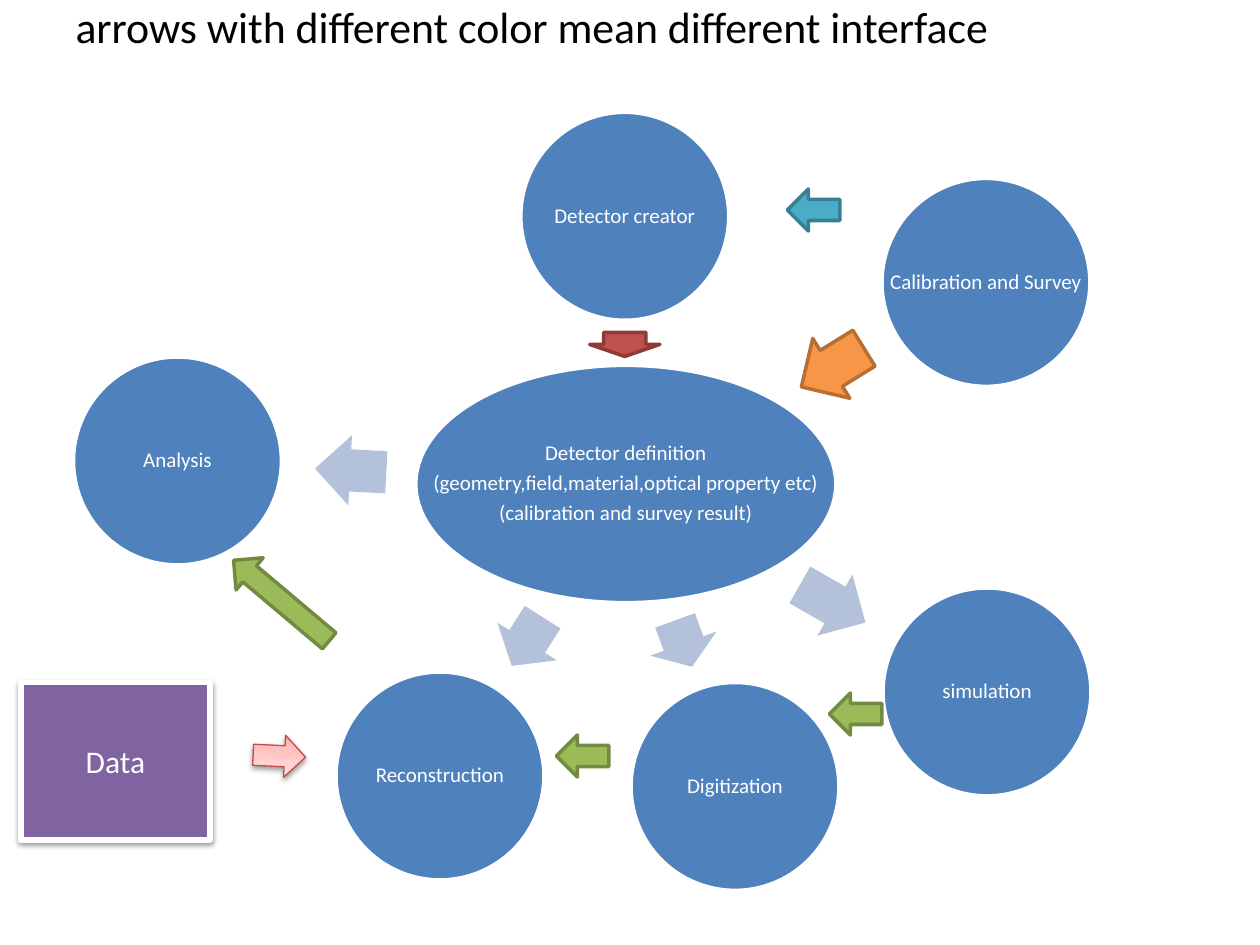
from dataclasses import dataclass

from lxml import etree
from pptx import Presentation
from pptx.dml.color import RGBColor
from pptx.enum.shapes import MSO_SHAPE
from pptx.enum.text import MSO_ANCHOR, PP_ALIGN
from pptx.oxml.ns import qn
from pptx.util import Inches, Pt

OVAL, RECT = MSO_SHAPE.OVAL, MSO_SHAPE.RECTANGLE
RIGHT, LEFT = MSO_SHAPE.RIGHT_ARROW, MSO_SHAPE.LEFT_ARROW
MIDDLE = MSO_ANCHOR.MIDDLE
CENTER, START = PP_ALIGN.CENTER, PP_ALIGN.LEFT
COLS, ROWS = 120, 90


@dataclass(frozen=True)
class Theme:
    """Colours as fill and line pairs, the font and the type sizes."""
    font: str = "Calibri"
    head: float = 25
    big: float = 18
    small: float = 12
    ink: str = "000000"
    white: str = "FFFFFF"
    node: tuple = ("4F81BD", "FFFFFF")
    data: tuple = ("8064A2", "FFFFFF")
    pale: tuple = ("B3C1DB", None)
    red: tuple = ("C0504D", "8E3B39")
    orange: tuple = ("F79646", "B76F34")
    green: tuple = ("9BBB59", "738A42")
    teal: tuple = ("4BACC6", "377F92")
    pink: tuple = ("FFC0BF", "BF4C48")
    fade: tuple = ((0, "FFA6A5"), (35, "FFC0BF"), (100, "FFE7E7"))


class Deck:
    """Draws styled parts on a slide, placed by centre in grid cells."""

    def __init__(self, theme):
        """Open a deck with one title slide."""
        self.theme = theme
        self.prs = Presentation()
        self.prs.slide_width, self.prs.slide_height = Inches(10), Inches(7.5)
        self.slide = self.prs.slides.add_slide(self.prs.slide_layouts[5])

    def box(self, x, y, w, h):
        """Turn a centre and size in cells into left, top, width, height."""
        col, row = self.prs.slide_width / COLS, self.prs.slide_height / ROWS
        return [round(v) for v in
                ((x - w / 2) * col, (y - h / 2) * row, w * col, h * row)]

    def label(self, frame, lines, size, color, align=CENTER):
        """Set one paragraph for each line."""
        frame.vertical_anchor = MIDDLE
        for i, line in enumerate(lines):
            para = frame.add_paragraph() if i else frame.paragraphs[0]
            para.alignment = align
            run = para.add_run()
            run.text = line
            run.font.name, run.font.size = self.theme.font, Pt(size)
            run.font.color.rgb = RGBColor.from_string(color)

    def title(self, text, *place):
        """Move and fill the title placeholder."""
        head = self.slide.shapes.title
        head.left, head.top, head.width, head.height = self.box(*place)
        self.label(head.text_frame, [text], self.theme.head, self.theme.ink, START)

    def shape(self, kind, place, paint, width=2, turn=0):
        """Add a preset shape with its fill, line and turn."""
        shape = self.slide.shapes.add_shape(kind, *self.box(*place))
        shape.shadow.inherit = False
        shape.rotation = turn
        fill, line = paint
        shape.fill.solid()
        shape.fill.fore_color.rgb = RGBColor.from_string(fill)
        if line:
            shape.line.color.rgb = RGBColor.from_string(line)
            shape.line.width = Pt(width)
        else:
            shape.line.fill.background()
        return shape

    def node(self, lines, x, y, w=19.8, h=19.8):
        """Add an oval with small centred lines."""
        frame = self.shape(OVAL, (x, y, w, h), self.theme.node).text_frame
        frame.word_wrap = False
        frame.margin_left = frame.margin_right = Inches(0.02)
        frame.margin_top = frame.margin_bottom = Inches(0.02)
        self.label(frame, lines, self.theme.small, self.theme.white)
        for para in frame.paragraphs:
            para.line_spacing, para.space_after = 0.9, Pt(4.2)

    def spoke(self, x, y, w, turn, paint):
        """Add a broad arrow to or from the hub."""
        arrow = self.shape(RIGHT, (x, y, w, 6.7), paint, turn=turn)
        arrow.adjustments[0] = 0.6

    def flow(self, x, y, paint, w=5, turn=0, width=2):
        """Add a slim arrow between two steps."""
        return self.shape(LEFT, (x, y, w, 4), paint, width, turn)

    def block(self, text, *place):
        """Add a raised block with a large label."""
        block = self.shape(RECT, place, self.theme.data, 3)
        self.label(block.text_frame, [text], self.theme.big, self.theme.white)
        self.shade(block)

    def shade(self, shape):
        """Cast a soft shadow straight down."""
        glow = etree.SubElement(
            shape.element.spPr.find(qn("a:effectLst")), qn("a:outerShdw"),
            blurRad="40000", dist="20000", dir="5400000", rotWithShape="0")
        tone = etree.SubElement(glow, qn("a:srgbClr"), val=self.theme.ink)
        etree.SubElement(tone, qn("a:alpha"), val="38000")

    def fade(self, shape):
        """Swap the plain fill for the theme's upward fade."""
        props = shape.element.spPr
        grad = etree.Element(qn("a:gradFill"), rotWithShape="1")
        stops = etree.SubElement(grad, qn("a:gsLst"))
        for pos, color in self.theme.fade:
            stop = etree.SubElement(stops, qn("a:gs"), pos=str(pos * 1000))
            etree.SubElement(stop, qn("a:srgbClr"), val=color)
        etree.SubElement(grad, qn("a:lin"), ang="16200000", scaled="1")
        props.replace(props.find(qn("a:solidFill")), grad)


def main():
    """Build and save the slide."""
    theme = Theme()
    deck = Deck(theme)
    deck.title("arrows with different color mean different interface",
               60, 2.5, 108, 15)
    deck.node(["Detector definition",
               "(geometry,field,material,optical property etc)",
               "(calibration and survey result)"], 59.6, 46.1, 40, 22.6)
    for text, x, y in (("Detector creator", 59.5, 20.6),
                       ("Calibration and Survey", 93.9, 26.9),
                       ("simulation", 94, 65.9),
                       ("Reconstruction", 41.9, 73.9),
                       ("Analysis", 16.9, 43.9),
                       ("Digitization", 70, 74.9)):
        deck.node([text], x, y)
    for spoke in ((59.5, 32.8, 2.3, 89.9, theme.red),
                  (79.3, 35, 7, 148.2, theme.orange),
                  (79.3, 57.5, 7.2, 29.8, theme.pale),
                  (50.2, 61.1, 5.5, 122.4, theme.pale),
                  (33.4, 44.8, 6.8, 183, theme.pale),
                  (65.1, 61.3, 4.7, 69.9, theme.pale)):
        deck.spoke(*spoke)
    deck.flow(81.5, 68, theme.green)
    deck.flow(55.5, 72, theme.green)
    deck.block("Data", 11, 72.5, 18, 15)
    feed = deck.flow(26.6, 72, theme.pink, turn=182.7, width=0.75)
    deck.fade(feed)
    deck.shade(feed)
    deck.flow(26.8, 57.2, theme.green, w=11.9, turn=40.1)
    deck.flow(77.5, 20, theme.teal)
    deck.prs.save("out.pptx")


if __name__ == "__main__":
    main()
